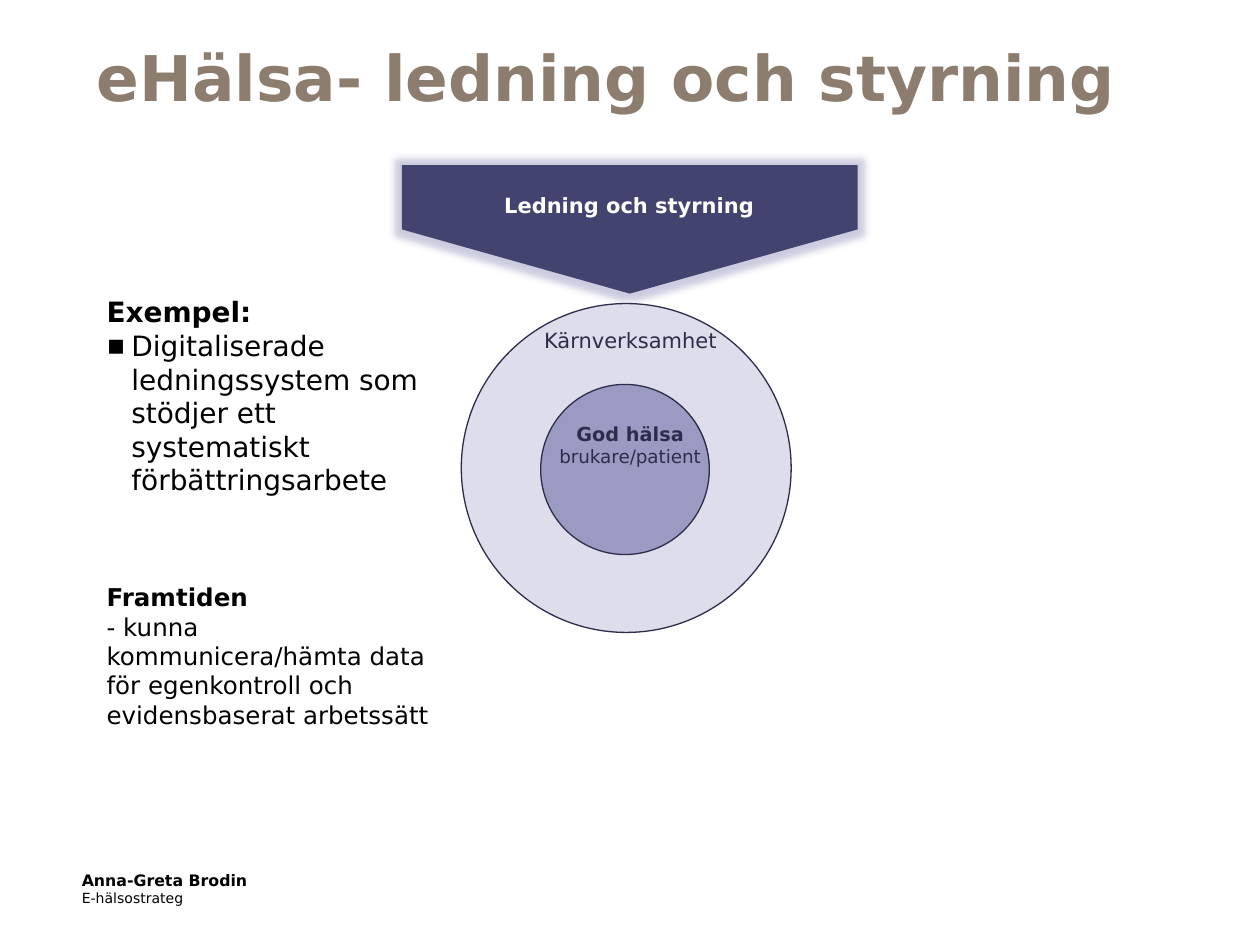
from dataclasses import dataclass

from lxml import etree
from pptx import Presentation
from pptx import util as u
from pptx.dml.color import RGBColor
from pptx.enum import shapes, text
from pptx.oxml.ns import qn


@dataclass(frozen=True)
class Theme:
    font: str = "DejaVu Sans"
    title_color: str = "8C7D6E"
    body_color: str = "000000"
    arrow_text: str = "FFFFFF"
    arrow_fill: str = "434370"
    ring_fill: str = "DDDDEB"
    core_fill: str = "9A9AC2"
    outline: str = "2D2D4B"
    title_size: float = 36
    example_size: float = 16
    future_size: float = 14
    label_size: float = 12
    core_heading_size: float = 11
    core_size: float = 10.5
    name_size: float = 9
    role_size: float = 8


THEME = Theme()
LEFT, CENTER = text.PP_ALIGN.LEFT, text.PP_ALIGN.CENTER


def add_text(container, box, paragraphs, color, align=LEFT):
    """Each paragraph is a list of lines, and each line is (text, size, bold)."""
    shape = container.add_textbox(*map(u.Cm, box))
    frame = shape.text_frame
    frame.word_wrap = True
    for index, lines in enumerate(paragraphs):
        paragraph = frame.add_paragraph() if index else frame.paragraphs[0]
        paragraph.text = "\v".join(line[0] for line in lines)
        paragraph.alignment = align
        for run, (_, size, bold) in zip(paragraph.runs, lines):
            run.font.name = THEME.font
            run.font.size = u.Pt(size)
            run.font.bold = bold
            run.font.color.rgb = RGBColor.from_string(color)
    return frame


def add_figure(container, kind, box, fill, outline=None):
    shape = container.add_shape(kind, *map(u.Cm, box))
    shape.shadow.inherit = False
    shape.fill.solid()
    shape.fill.fore_color.rgb = RGBColor.from_string(fill)
    if outline:
        shape.line.color.rgb = RGBColor.from_string(outline)
        shape.line.width = u.Pt(0.75)
    else:
        shape.line.fill.background()
    return shape


def add_glow(shape, color, radius):
    effects = shape._element.spPr.find(qn("a:effectLst"))
    glow = etree.SubElement(effects, qn("a:glow"), rad=str(u.Pt(radius)))
    tint = etree.SubElement(glow, qn("a:srgbClr"), val=color)
    etree.SubElement(tint, qn("a:alpha"), val="50000")


def add_bullet(paragraph, character, indent):
    properties = paragraph._p.get_or_add_pPr()
    properties.set("marL", str(u.Cm(indent)))
    properties.set("indent", str(-u.Cm(indent)))
    etree.SubElement(properties, qn("a:buFont"), typeface=THEME.font)
    etree.SubElement(properties, qn("a:buChar"), char=character)


def add_management_arrow(slide):
    arrow = add_figure(slide.shapes, shapes.MSO_SHAPE.PENTAGON,
                       (11.4, 0.03, 2.59, 9.19), THEME.arrow_fill)
    # The box is given before the turn that makes the arrow point down.
    width, height = arrow.height, arrow.width
    arrow.left += (arrow.width - width) // 2
    arrow.top += (arrow.height - height) // 2
    arrow.width, arrow.height = width, height
    arrow.left, arrow.top = u.Cm(11.4), u.Cm(0.03)
    arrow.width, arrow.height = u.Cm(2.59), u.Cm(9.19)
    arrow.rotation = 90
    add_glow(arrow, THEME.core_fill, 8)
    add_text(slide.shapes, (9.09, 3.76, 7.19, 0.76),
             [[("Ledning och styrning", THEME.label_size, True)]],
             THEME.arrow_text, CENTER)


def add_core_circles(slide):
    group = slide.shapes.add_group_shape().shapes
    ring = add_figure(group, shapes.MSO_SHAPE.DONUT, (9.3, 6.12, 6.65, 6.63),
                      THEME.ring_fill, THEME.outline)
    ring.adjustments[0] = 0.25
    add_figure(group, shapes.MSO_SHAPE.OVAL, (10.9, 7.75, 3.4, 3.43),
               THEME.core_fill, THEME.outline)
    add_text(group, (10.41, 6.48, 4.6, 0.76),
             [[("Kärnverksamhet", THEME.label_size, False)]],
             THEME.outline, CENTER)
    add_text(slide.shapes, (10.8, 8.38, 3.81, 1.22),
             [[("God hälsa", THEME.core_heading_size, True),
               ("brukare/patient", THEME.core_size, False)]],
             THEME.outline, CENTER)


def add_examples(slide):
    frame = add_text(slide.shapes, (1.9, 5.82, 7.52, 9.14), [
        [("Exempel:", THEME.example_size, True)],
        [("Digitaliserade ledningssystem som stödjer ett systematiskt "
          "förbättringsarbete", THEME.example_size, False)],
        [("Framtiden", THEME.future_size, True),
         ("- kunna kommunicera/hämta data för egenkontroll och "
          "evidensbaserat arbetssätt", THEME.future_size, False)],
    ], THEME.body_color)
    add_bullet(frame.paragraphs[1], "▪", 0.5)
    frame.paragraphs[2].space_before = u.Pt(49)


def main():
    presentation = Presentation()
    presentation.slide_width = u.Cm(25.4)
    presentation.slide_height = u.Cm(19.05)
    slide = presentation.slides.add_slide(presentation.slide_layouts[6])

    add_management_arrow(slide)
    add_core_circles(slide)
    add_examples(slide)
    title = add_text(slide.shapes, (1.7, 0.53, 21.59, 2.01),
                     [[("eHälsa- ledning och styrning", THEME.title_size, True)]],
                     THEME.title_color)
    title.vertical_anchor = text.MSO_ANCHOR.MIDDLE
    add_text(slide.shapes, (1.4, 17.42, 13.77, 0.99),
             [[("Anna-Greta Brodin", THEME.name_size, True)],
              [("E-hälsostrateg", THEME.role_size, False)]], THEME.body_color)

    presentation.save("out.pptx")


if __name__ == "__main__":
    main()
